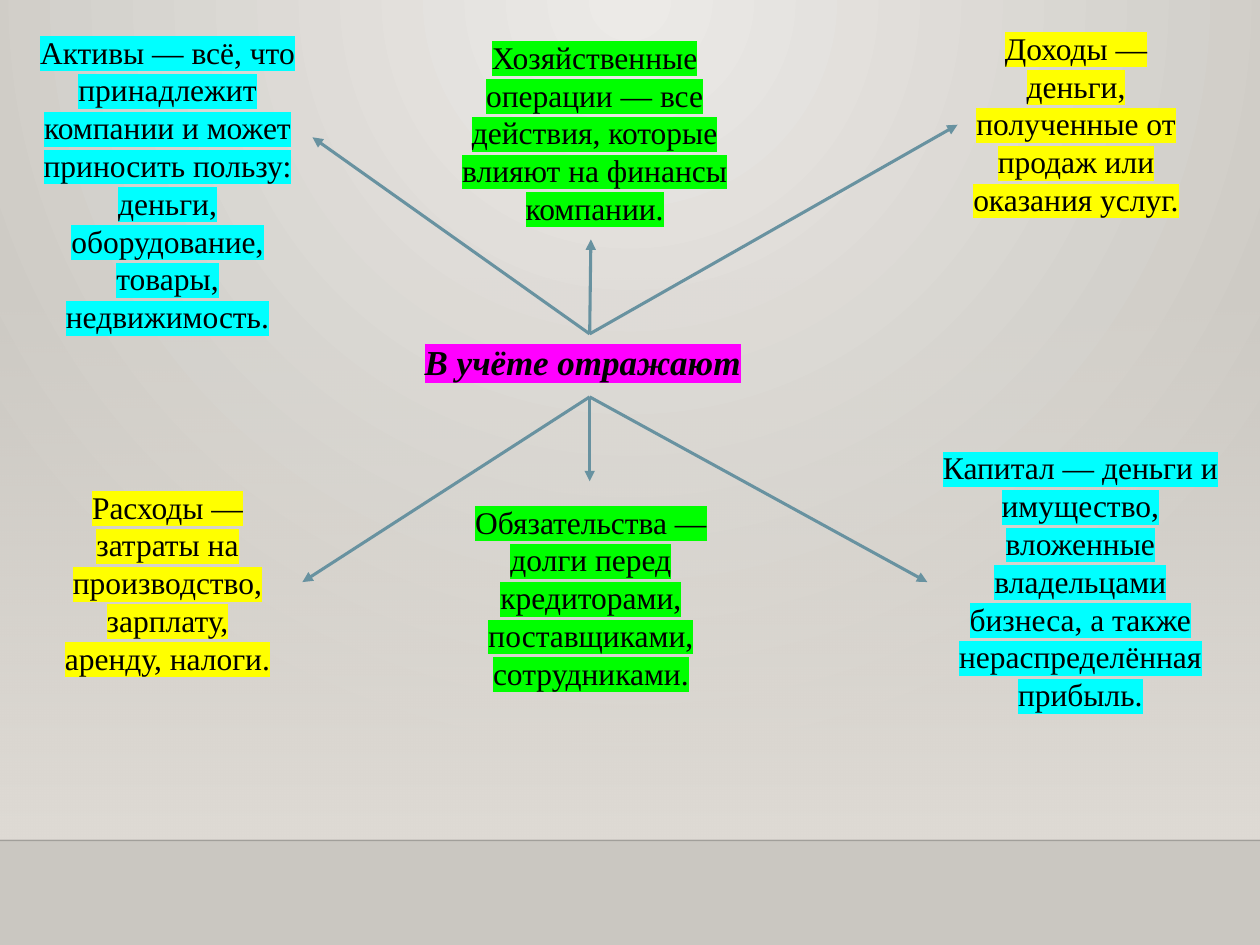
from lxml.etree import SubElement as Sub
from pptx import Presentation
from pptx.dml.color import RGBColor as RGB
from pptx.enum.shapes import MSO_CONNECTOR as Conn, MSO_SHAPE as Geo
from pptx.enum.text import MSO_ANCHOR as Anchor, MSO_AUTO_SIZE as Auto, PP_ALIGN as Align
from pptx.oxml.ns import qn
from pptx.util import Inches, Pt

BLACK = RGB(0, 0, 0)
LINE = RGB(0x00, 0x00, 0x01)
STEEL = RGB(0x68, 0x92, 0xA0)
SAND = RGB(0xDF, 0xDB, 0xD5)
PALE = RGB(0xEC, 0xEA, 0xE7)
GREY = RGB(0xCA, 0xC7, 0xC1)
CYAN = RGB(0x00, 0xFF, 0xFF)
LIME = RGB(0x00, 0xFF, 0x00)
GOLD = RGB(0xFF, 0xFF, 0x00)
PINK = RGB(0xFF, 0x00, 0xFF)

BODY = {"name": "Times New Roman", "size": Pt(18), "bold": False, "italic": False}
HEAD = {**BODY, "size": Pt(20), "bold": True, "italic": True}
FRAME = {"word_wrap": True, "auto_size": Auto.NONE, "vertical_anchor": Anchor.TOP}

ASSETS = "Активы — всё, что принадлежит компании и может приносить пользу: деньги, оборудование, товары, недвижимость."
DEBTS = "Обязательства — долги перед кредиторами, поставщиками, сотрудниками."
INCOME = "Доходы — деньги, полученные от продаж или оказания услуг."
COSTS = "Расходы — затраты на производство, зарплату, аренду, налоги."
FUNDS = "Капитал — деньги и имущество, вложенные владельцами бизнеса, а также нераспределённая прибыль."
DEALS = "Хозяйственные операции — все действия, которые влияют на финансы компании."


class Deck:
    def __init__(self):
        self.show = Presentation()
        self.show.slide_width, self.show.slide_height = Inches(10), Inches(7.5)
        self.slide = self.show.slides.add_slide(self.show.slide_layouts[5])
        self.shapes = self.slide.shapes

    def blend(self, fill, first, last):
        fill.gradient()
        for stop, hue in zip(fill.gradient_stops, (first, last)):
            stop.color.rgb = hue

    def fade(self, item, part):
        hue = next(item.element.iter(qn("a:srgbClr")))
        Sub(hue, qn("a:alpha"), val=str(part * 1000))

    def back(self):
        self.blend(self.slide.background.fill, PALE, GREY)
        grad = next(self.slide.element.iter(qn("a:gradFill")))
        grad.remove(grad.find(qn("a:lin")))
        way = Sub(grad, qn("a:path"), path="circle")
        Sub(way, qn("a:fillToRect"), l="43000", t="0", r="43000", b="100000")

    def band(self, *at):
        rect = self.shapes.add_shape(Geo.RECTANGLE, *map(Inches, at))
        rect.shadow.inherit = False
        self.blend(rect.fill, SAND, SAND)
        rect.fill.gradient_angle = 270
        self.fade(rect, 0)
        rect.line.fill.background()
        return rect

    def label(self, box, text, mark, form, align):
        frame = box.text_frame
        for key, val in FRAME.items():
            setattr(frame, key, val)
        para = frame.paragraphs[0]
        para.alignment = align
        run = para.add_run()
        run.text = text
        for key, val in form.items():
            setattr(run.font, key, val)
        run.font.color.rgb = BLACK
        latin = next(run._r.iter(qn("a:latin")))
        light = Sub(latin.getparent(), qn("a:highlight"))
        Sub(light, qn("a:srgbClr"), val=str(mark))
        latin.addprevious(light)

    def title(self, text, mark, *at):
        box = self.shapes.title
        box.left, box.top, box.width, box.height = map(Inches, at)
        self.label(box, text, mark, HEAD, Align.LEFT)
        box.element.getparent().append(box.element)
        return box

    def note(self, text, mark, *at):
        box = self.shapes.add_textbox(*map(Inches, at))
        self.label(box, text, mark, BODY, Align.CENTER)
        return box

    def rule(self, start, end, hue, width):
        line = self.shapes.add_connector(Conn.STRAIGHT, *map(Inches, start + end))
        line.line.color.rgb = hue
        line.line.width = Pt(width)
        Sub(line.element.spPr, qn("a:effectLst"))
        return line

    def arrow(self, start, end, source=None, goal=None):
        line = self.rule(start, end, STEEL, 1.75)
        Sub(line.element.spPr.find(qn("a:ln")), qn("a:tailEnd"), type="triangle")
        if source:
            line.begin_connect(*source)
        if goal:
            line.end_connect(*goal)


def main():
    deck = Deck()
    deck.back()
    deck.band(0, 2.2, 10, 4.46)
    deck.fade(deck.rule((0, 6.67), (10, 6.67), LINE, 1), 20)

    head = deck.title("В учёте отражают", PINK, 3.27, 2.65, 2.82, 0.44)
    deck.note(ASSETS, CYAN, 0.18, 0.21, 2.3, 2.52)
    deck.note(DEBTS, LIME, 3.59, 3.94, 2.2, 1.62)
    income = deck.note(INCOME, GOLD, 7.6, 0.18, 1.88, 1.62)
    deck.note(COSTS, GOLD, 0.35, 3.82, 1.96, 1.62)
    funds = deck.note(FUNDS, CYAN, 7.36, 3.51, 2.43, 2.22)
    deck.note(DEALS, LIME, 3.47, 0.25, 2.5, 1.62)

    for end, goal in (((2.48, 1.09), None), ((4.69, 1.9), None), ((7.6, 0.98), (income, 1))):
        deck.arrow((4.68, 2.65), end, (head, 0), goal)
    for end, goal in (((7.36, 4.62), (funds, 1)), ((2.4, 4.62), None), ((4.68, 3.82), None)):
        deck.arrow((4.68, 3.15), end, goal=goal)

    deck.show.save("out.pptx")


if __name__ == "__main__":
    main()
